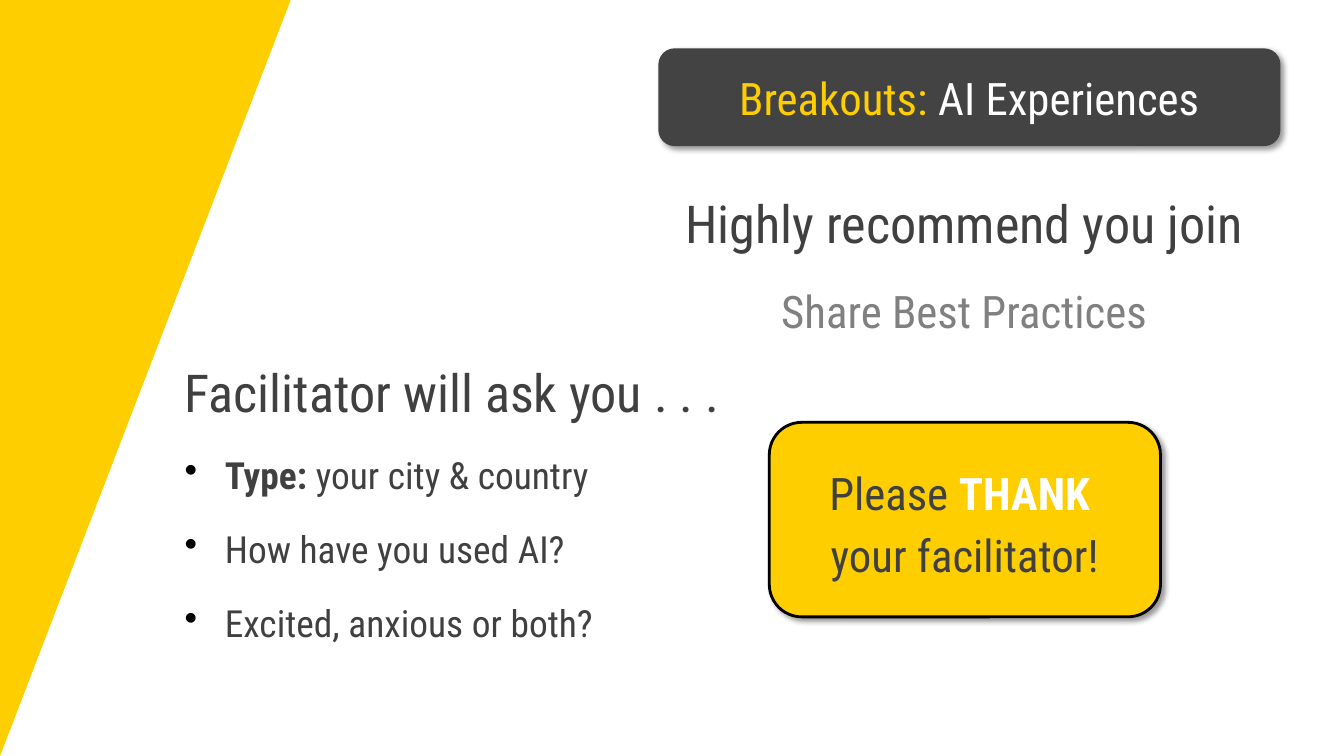
import pptx
import pptx.util
from lxml import etree
from pptx.dml.color import RGBColor
from pptx.enum.shapes import MSO_SHAPE
from pptx.enum.text import MSO_ANCHOR, PP_ALIGN
from pptx.oxml.ns import qn
from pptx.util import Inches, Pt

FONT = "Roboto Condensed"
WEDGE_YELLOW = RGBColor(0xFF, 0xCE, 0x00)
YELLOW = RGBColor(0xFE, 0xCE, 0x00)
CHARCOAL = RGBColor(0x43, 0x43, 0x43)
DARK = RGBColor(0x40, 0x40, 0x40)
GRAY = RGBColor(0x80, 0x80, 0x80)
WHITE = RGBColor(0xFF, 0xFF, 0xFF)
BLACK = RGBColor(0, 0, 0)

HEADING_SIZE = 37.3
LABEL_SIZE = 32
BULLET_SIZE = 26.7


def add_element(parent, tag, **attributes):
    return etree.SubElement(parent, qn(tag), attributes)


def add_color(parent, color):
    return add_element(parent, "a:srgbClr", val=str(color))


def add_run(paragraph, text, size, color, bold=False):
    run = paragraph.add_run()
    run.text = text
    run.font.name = FONT
    run.font.size = Pt(size)
    run.font.color.rgb = color
    run.font.bold = bold


def space_paragraph(paragraph):
    paragraph.line_spacing = 1.15
    paragraph.space_after = Pt(16)


def add_bullet(paragraph):
    properties = paragraph._p.get_or_add_pPr()
    properties.set("marL", str(Inches(0.4)))
    properties.set("indent", str(Inches(-0.4)))
    add_color(add_element(properties, "a:buClr"), BLACK)
    add_element(properties, "a:buChar", char="•")


def add_drop_shadow(shape):
    effects = shape._element.spPr.find(qn("a:effectLst"))
    shadow = add_element(effects, "a:outerShdw", blurRad=str(Pt(4)), dist=str(Pt(3)),
                         dir="2700000", algn="tl", rotWithShape="0")
    add_element(add_color(shadow, BLACK), "a:alpha", val="40000")


def add_filled_shape(slide, kind, left, top, width, height, fill):
    shape = slide.shapes.add_shape(kind, Inches(left), Inches(top), Inches(width), Inches(height))
    shape.shadow.inherit = False
    shape.fill.solid()
    shape.fill.fore_color.rgb = fill
    shape.line.fill.background()
    return shape


def add_corner_wedge(slide):
    """Add the triangle whose right angle sits in the top left corner."""
    wedge = add_filled_shape(slide, MSO_SHAPE.RIGHT_TRIANGLE, 0, -0.02, 2.89, 7.52, WEDGE_YELLOW)
    wedge.rotation = 180
    wedge._element.spPr.find(qn("a:xfrm")).set("flipH", "1")


def add_panel(slide, left, top, width, height, fill):
    """Add a rounded panel with a drop shadow; return it with its centred paragraph."""
    panel = add_filled_shape(slide, MSO_SHAPE.ROUNDED_RECTANGLE, left, top, width, height, fill)
    add_drop_shadow(panel)
    panel.text_frame.word_wrap = True
    panel.text_frame.vertical_anchor = MSO_ANCHOR.MIDDLE
    paragraph = panel.text_frame.paragraphs[0]
    paragraph.alignment = PP_ALIGN.CENTER
    return panel, paragraph


def add_text_box(slide, left, top, width, height, text, size, color, alignment):
    box = slide.shapes.add_textbox(Inches(left), Inches(top), Inches(width), Inches(height))
    frame = box.text_frame
    frame.word_wrap = True
    frame.margin_left = frame.margin_right = Inches(0.13)
    frame.margin_top = frame.margin_bottom = Inches(0.13)
    paragraph = frame.paragraphs[0]
    paragraph.alignment = alignment
    space_paragraph(paragraph)
    add_run(paragraph, text, size, color)
    return frame


def add_questions(slide):
    frame = add_text_box(slide, 1.7, 3.35, 5.68, 3.85, "Facilitator will ask you . . .",
                         HEADING_SIZE, DARK, PP_ALIGN.LEFT)
    questions = [
        ("Type:", " your city & country"),
        ("", "How have you used AI?"),
        ("", "Excited, anxious or both?"),
    ]
    for lead, question in questions:
        paragraph = frame.add_paragraph()
        space_paragraph(paragraph)
        add_bullet(paragraph)
        if lead:
            add_run(paragraph, lead, BULLET_SIZE, DARK, bold=True)
        add_run(paragraph, question, BULLET_SIZE, DARK)


def add_thanks(slide):
    panel, paragraph = add_panel(slide, 7.63, 4.19, 3.88, 1.93, YELLOW)
    panel.line.color.rgb = BLACK
    panel.line.width = Pt(2)
    space_paragraph(paragraph)
    add_run(paragraph, "Please ", LABEL_SIZE, DARK)
    add_run(paragraph, "THANK ", LABEL_SIZE, WHITE, bold=True)
    paragraph.add_line_break()
    add_run(paragraph, "your facilitator!", LABEL_SIZE, DARK)


def main():
    presentation = pptx.Presentation()
    presentation.slide_width = Inches(13.33)
    presentation.slide_height = Inches(7.5)
    slide = presentation.slides.add_slide(presentation.slide_layouts[6])

    add_corner_wedge(slide)
    title = add_panel(slide, 6.53, 0.48, 6.17, 0.97, CHARCOAL)[1]
    add_run(title, "Breakouts:", LABEL_SIZE, YELLOW)
    add_run(title, " AI Experiences", LABEL_SIZE, WHITE)

    add_text_box(slide, 6.33, 1.68, 6.47, 0.97, "Highly recommend you join",
                 HEADING_SIZE, DARK, PP_ALIGN.CENTER)
    add_text_box(slide, 6.33, 2.61, 6.47, 0.97, "Share Best Practices",
                 LABEL_SIZE, GRAY, PP_ALIGN.CENTER)
    add_questions(slide)
    add_thanks(slide)
    presentation.save("out.pptx")


if __name__ == "__main__":
    main()
